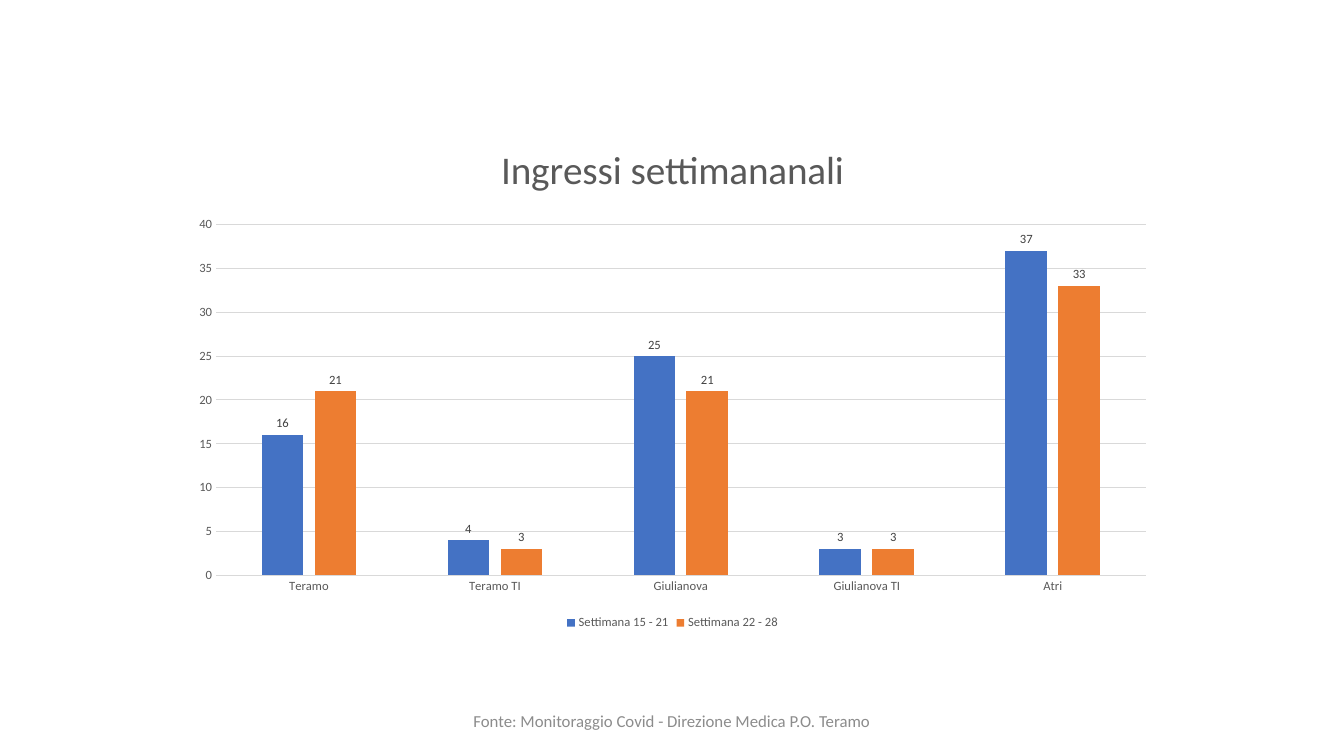
from pptx import Presentation
from pptx import util as u
from pptx.chart.data import CategoryChartData
from pptx.dml.color import RGBColor
from pptx.enum import chart as charts, text

PX = 9525
FONT = "Calibri"
COLOURS = {
    "first": "4472C4",
    "second": "ED7D31",
    "grid": "D9D9D9",
    "axis": "595959",
    "label": "404040",
    "source": "8C8C8C",
}
HOSPITALS = ["Teramo", "Teramo TI", "Giulianova", "Giulianova TI", "Atri"]
WEEKS = [
    ("Settimana 15 - 21", [16, 4, 25, 3, 37], "first"),
    ("Settimana 22 - 28", [21, 3, 21, 3, 33], "second"),
]


def colour(name):
    """Return the named colour."""
    return RGBColor.from_string(COLOURS[name])


def place(*lengths):
    """Turn pixel lengths into EMU."""
    return [u.Emu(length * PX) for length in lengths]


def style_font(font, size, name):
    """Set typeface, size and colour of a font."""
    font.name = FONT
    font.size = u.Pt(size)
    font.bold = False
    font.color.rgb = colour(name)


def add_span(para, words, size, name):
    """Add one styled run to a paragraph."""
    span = para.add_run()
    span.text = words
    style_font(span.font, size, name)


def style_line(line):
    """Draw a thin grey line."""
    line.color.rgb = colour("grid")
    line.width = u.Pt(0.75)


def style_axes(chart):
    """Format both axes and the gridlines."""
    for axis in (chart.category_axis, chart.value_axis):
        axis.major_tick_mark = charts.XL_TICK_MARK.NONE
        axis.minor_tick_mark = charts.XL_TICK_MARK.NONE
        style_font(axis.tick_labels.font, 9, "axis")
    style_line(chart.category_axis.format.line)
    values = chart.value_axis
    values.minimum_scale, values.maximum_scale, values.major_unit = 0, 40, 5
    values.format.line.fill.background()
    values.has_major_gridlines = True
    style_line(values.major_gridlines.format.line)


def style_columns(plot):
    """Colour the columns and show their values."""
    plot.gap_width = 219
    plot.overlap = -27
    plot.vary_by_categories = False
    for series, (_, _, name) in zip(plot.series, WEEKS):
        series.format.fill.solid()
        series.format.fill.fore_color.rgb = colour(name)
        series.invert_if_negative = False
        labels = series.data_labels
        labels.show_value = True
        labels.position = charts.XL_LABEL_POSITION.OUTSIDE_END
        style_font(labels.font, 9, "label")


def add_column_chart(page, title, *frame):
    """Add the clustered column chart of weekly admissions."""
    data = CategoryChartData()
    data.categories = HOSPITALS
    for week, admissions, _ in WEEKS:
        data.add_series(week, admissions)
    kind = charts.XL_CHART_TYPE.COLUMN_CLUSTERED
    chart = page.shapes.add_chart(kind, *place(*frame), data).chart
    style_font(chart.font, 10, "axis")
    chart.has_title = True
    add_span(chart.chart_title.text_frame.paragraphs[0], title, 28, "axis")
    chart.chart_title.include_in_layout = False
    chart.has_legend = True
    chart.legend.position = charts.XL_LEGEND_POSITION.BOTTOM
    chart.legend.include_in_layout = False
    style_font(chart.legend.font, 9, "axis")
    style_axes(chart)
    style_columns(chart.plots[0])


def add_source(page, words, *frame):
    """Add the centred source line."""
    box = page.shapes.add_textbox(*place(*frame)).text_frame
    box.word_wrap = True
    box.vertical_anchor = text.MSO_ANCHOR.MIDDLE
    para = box.paragraphs[0]
    para.alignment = text.PP_ALIGN.CENTER
    add_span(para, words, 12, "source")


def main():
    """Build and save the slide."""
    deck = Presentation()
    deck.slide_width, deck.slide_height = place(1280, 720)
    page = deck.slides.add_slide(deck.slide_layouts[6])
    add_column_chart(page, "Ingressi settimananali", 171, 115, 939, 489)
    add_source(
        page,
        "Fonte: Monitoraggio Covid - Direzione Medica P.O. Teramo",
        424, 667, 432, 38,
    )
    deck.save("out.pptx")


if __name__ == "__main__":
    main()
